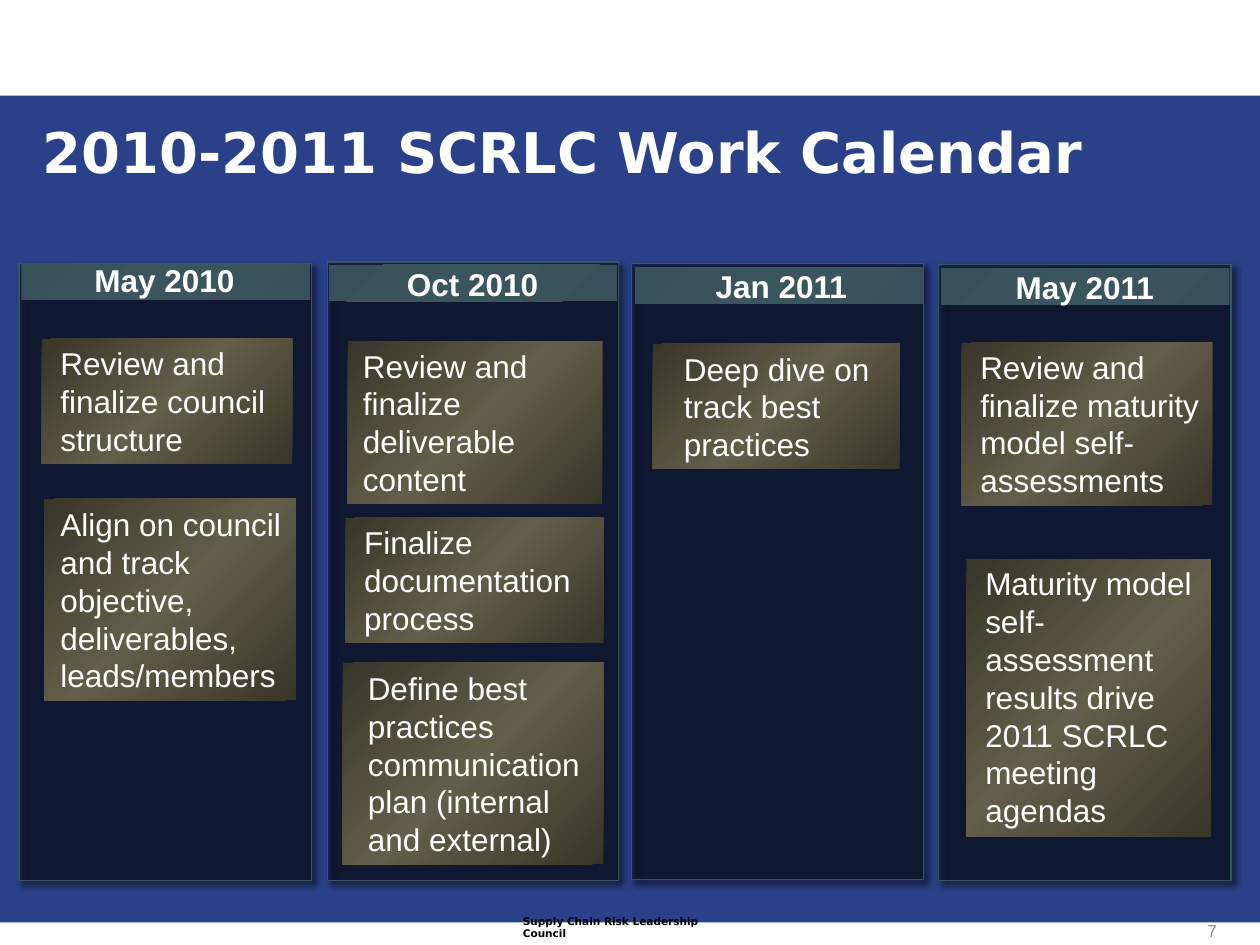
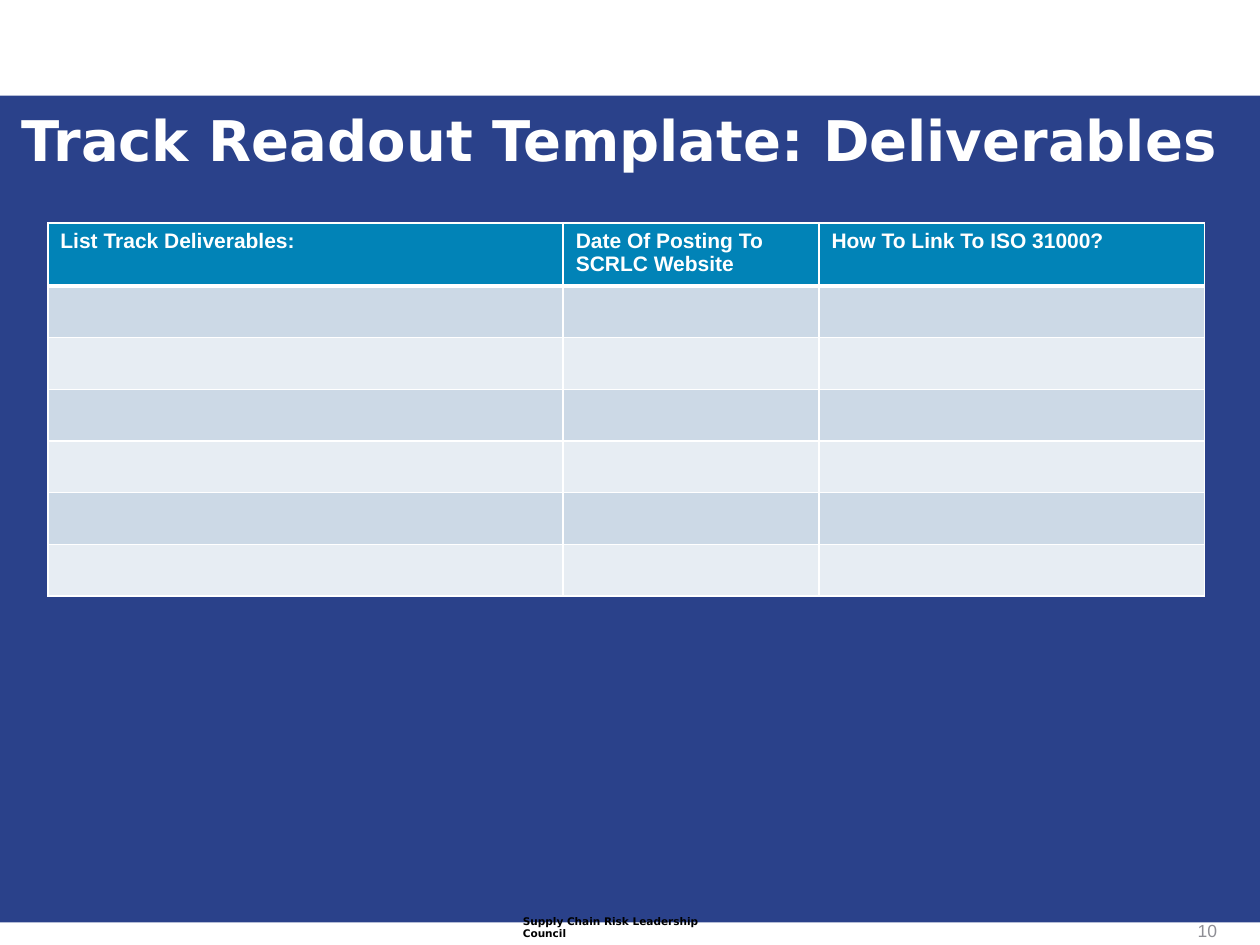
"""Build the council work calendar and the track deliverables template."""
from lxml.etree import SubElement
from pptx import Presentation
from pptx.dml.color import RGBColor
from pptx.enum.shapes import MSO_SHAPE as Shape
from pptx.enum.text import MSO_ANCHOR as Anchor, PP_ALIGN as Align
from pptx.oxml import parse_xml
from pptx.oxml.ns import nsdecls, qn
from pptx.util import Inches, Pt

COLORS = {
    "page": "2A418A", "white": "FFFFFF", "black": "000000", "number": "8E8E95",
    "edge": "3B555F", "header_dark": "385059", "header_light": "3B555F",
    "task_dark": "383529", "task_light": "635E49",
    "table_head": "0183B7", "row_odd": "CCD9E6", "row_even": "E7EDF3",
}
BODY_FONT, TITLE_FONT = "Arial", "DejaVu Sans"
FOOTER = "Supply Chain Risk Leadership Council"
HEADER_SIZE = (2.29, 0.29)

CALENDAR = [
    {"month": "May 2010", "panel": (0.15, 2.09, 2.32, 4.9),
     "header": (0.17, 2.09), "label": (0.66, 2.03, 1.3, 0.39),
     "tasks": [
         ("Review and finalize council structure", (0.33, 2.69, 1.99, 0.99), {}),
         ("Align on council and track objective, deliverables, leads/members",
          (0.35, 3.96, 2, 1.6), {"centered": True})]},
    {"month": "Oct 2010", "panel": (2.6, 2.08, 2.31, 4.91),
     "header": (2.61, 2.1), "label": (3.14, 2.06, 1.23, 0.39),
     "tasks": [
         ("Review and finalize deliverable content", (2.76, 2.71, 2.02, 1.29),
          {"inset": 0, "indent": 0.12}),
         ("Finalize documentation process", (2.74, 4.11, 2.05, 0.99), {}),
         ("Define best practices communication plan (internal and external)",
          (2.72, 5.26, 2.07, 1.6), {"centered": True})]},
    {"month": "Jan 2011", "panel": (5.01, 2.09, 2.32, 4.89),
     "header": (5.04, 2.12), "label": (5.59, 2.07, 1.23, 0.39),
     "tasks": [
         ("Deep dive on track best practices", (5.18, 2.73, 1.96, 0.99),
          {"centered": True})]},
    {"month": "May 2011", "panel": (7.45, 2.1, 2.32, 4.89),
     "header": (7.47, 2.13), "label": (7.97, 2.08, 1.29, 0.39),
     "tasks": [
         ("Review and finalize maturity model self-assessments",
          (7.63, 2.72, 1.99, 1.29), {}),
         ("Maturity model self-assessment results drive 2011 SCRLC meeting agendas",
          (7.67, 4.44, 1.94, 2.2), {})]},
]
TABLE_HEADINGS = ["List Track Deliverables:", "Date Of Posting To SCRLC Website",
                  "How To Link To ISO 31000?"]
TABLE_WIDTHS = [4.09, 2.03, 3.06]
TABLE_ROWS, ROW_HEIGHT = 7, 0.41


def rgb(name):
    return RGBColor.from_string(COLORS[name])


class SlideBuilder:
    """Hold the shared style and the current slide."""

    def __init__(self):
        self.deck = Presentation()
        self.deck.slide_width, self.deck.slide_height = Inches(10), Inches(7.5)
        background = self.deck.slide_master.background.fill
        background.solid()
        background.fore_color.rgb = rgb("page")
        self.page = None

    def new_page(self, title, title_at, number):
        self.page = self.deck.slides.add_slide(self.deck.slide_layouts[6])
        for top, height in ((7.32, 0.18), (0, 0.76)):
            self.rectangle((0, top, 10, height), "white")
        self.text((4.06, 7.31, 1.93, 0.19), FOOTER, 6, "black", TITLE_FONT,
                  bold=True, anchor=Anchor.BOTTOM)
        self.text((9.4, 7.25, 0.35, 0.26), number, 10, "number",
                  anchor=Anchor.BOTTOM, align=Align.RIGHT, wrap=False)
        para = self.text(title_at, title, 32, "white", TITLE_FONT, bold=True)
        para.line_spacing = 0.9

    def add_span(self, para, words, size, color, font=BODY_FONT, bold=False):
        span = para.add_run()
        span.text = words
        span.font.size, span.font.name, span.font.bold = Pt(size), font, bold
        span.font.color.rgb = rgb(color)

    def text(self, at, words, size, color, font=BODY_FONT, bold=False,
             anchor=Anchor.TOP, align=Align.LEFT, wrap=True):
        frame = self.page.shapes.add_textbox(*map(Inches, at)).text_frame
        frame.word_wrap, frame.vertical_anchor = wrap, anchor
        frame.margin_left = frame.margin_right = Inches(0.09)
        frame.margin_top = frame.margin_bottom = Inches(0.04)
        para = frame.paragraphs[0]
        para.alignment = align
        self.add_span(para, words, size, color, font, bold)
        return para

    def rectangle(self, at, color):
        box = self.page.shapes.add_shape(Shape.RECTANGLE, *map(Inches, at))
        box.shadow.inherit = False
        box.fill.solid()
        box.fill.fore_color.rgb = rgb(color)
        box.line.fill.background()
        return box

    def gradient_box(self, at, kind):
        box = self.rectangle(at, kind + "_dark")
        stops = "".join(
            f'<a:gs pos="{place}"><a:srgbClr val="{COLORS[kind + shade]}"/></a:gs>'
            for place, shade in ((0, "_dark"), (50000, "_light"), (100000, "_dark")))
        solid = box._element.spPr.find(qn("a:solidFill"))
        solid.getparent().replace(solid, parse_xml(
            f'<a:gradFill {nsdecls("a")} rotWithShape="1"><a:gsLst>{stops}</a:gsLst>'
            '<a:lin ang="2700000" scaled="1"/></a:gradFill>'))
        return box

    def panel(self, at):
        box = self.rectangle(at, "black")
        properties = box._element.spPr
        tint = properties.find(qn("a:solidFill"))[0]
        SubElement(tint, qn("a:alpha"), val="40000")
        box.line.color.rgb, box.line.width = rgb("edge"), Pt(0.75)
        properties.find(qn("a:effectLst")).append(parse_xml(
            f'<a:outerShdw {nsdecls("a")} blurRad="{Pt(4)}" dist="{Pt(3)}" '
            'dir="2700000" algn="tl" rotWithShape="0">'
            f'<a:srgbClr val="{COLORS["black"]}"><a:alpha val="40000"/></a:srgbClr>'
            '</a:outerShdw>'))

    def task(self, words, at, inset=0.08, indent=0.07, centered=False):
        frame = self.gradient_box(at, "task").text_frame
        frame.word_wrap = True
        frame.margin_left = frame.margin_right = Inches(inset)
        frame.margin_top = frame.margin_bottom = Inches(0.04)
        frame.vertical_anchor = Anchor.MIDDLE if centered else Anchor.TOP
        frame._txBody.bodyPr.set("anchorCtr", str(int(centered)))
        para = frame.paragraphs[0]
        para.alignment = Align.LEFT
        margin = Inches(0.01 if centered else indent)
        para._p.get_or_add_pPr().set("marL", str(margin))
        self.add_span(para, words, 18, "white")

    def month(self, month, panel, header, label, tasks):
        self.panel(panel)
        self.gradient_box(header + HEADER_SIZE, "header")
        self.text(label, month, 18, "white", bold=True,
                  anchor=Anchor.MIDDLE, wrap=False)
        for words, at, options in tasks:
            self.task(words, at, **options)

    def cell(self, cell, color, widths):
        properties = cell._tc.get_or_add_tcPr()
        for side, width in widths.items():
            properties.append(parse_xml(
                f'<a:ln{side} {nsdecls("a")} w="{Pt(width)}"><a:solidFill>'
                f'<a:srgbClr val="{COLORS["white"]}"/></a:solidFill></a:ln{side}>'))
        cell.fill.solid()
        cell.fill.fore_color.rgb = rgb(color)

    def table(self, left, top):
        at = (left, top, sum(TABLE_WIDTHS), TABLE_ROWS * ROW_HEIGHT)
        table = self.page.shapes.add_table(
            TABLE_ROWS, len(TABLE_WIDTHS), *map(Inches, at)).table
        table.horz_banding = False
        for column, width in zip(table.columns, TABLE_WIDTHS):
            column.width = Inches(width)
        for index, row in enumerate(table.rows):
            row.height = Inches(ROW_HEIGHT)
            color = ("row_odd" if index % 2 else "row_even") if index else "table_head"
            widths = {"L": 1, "R": 1, "T": 3 if index == 1 else 1,
                      "B": 1 if index else 3}
            for cell in row.cells:
                self.cell(cell, color, widths)
        for cell, heading in zip(table.rows[0].cells, TABLE_HEADINGS):
            self.add_span(cell.text_frame.paragraphs[0], heading, 12, "white", bold=True)


def main():
    builder = SlideBuilder()
    builder.new_page("2010-2011 SCRLC Work Calendar", (0.25, 0.95, 8.84, 0.66), "7")
    for column in CALENDAR:
        builder.month(**column)
    builder.new_page("Track Readout Template: Deliverables", (0.08, 0.86, 10, 1.15), "10")
    builder.table(0.38, 1.77)
    builder.deck.save("out.pptx")


if __name__ == "__main__":
    main()
